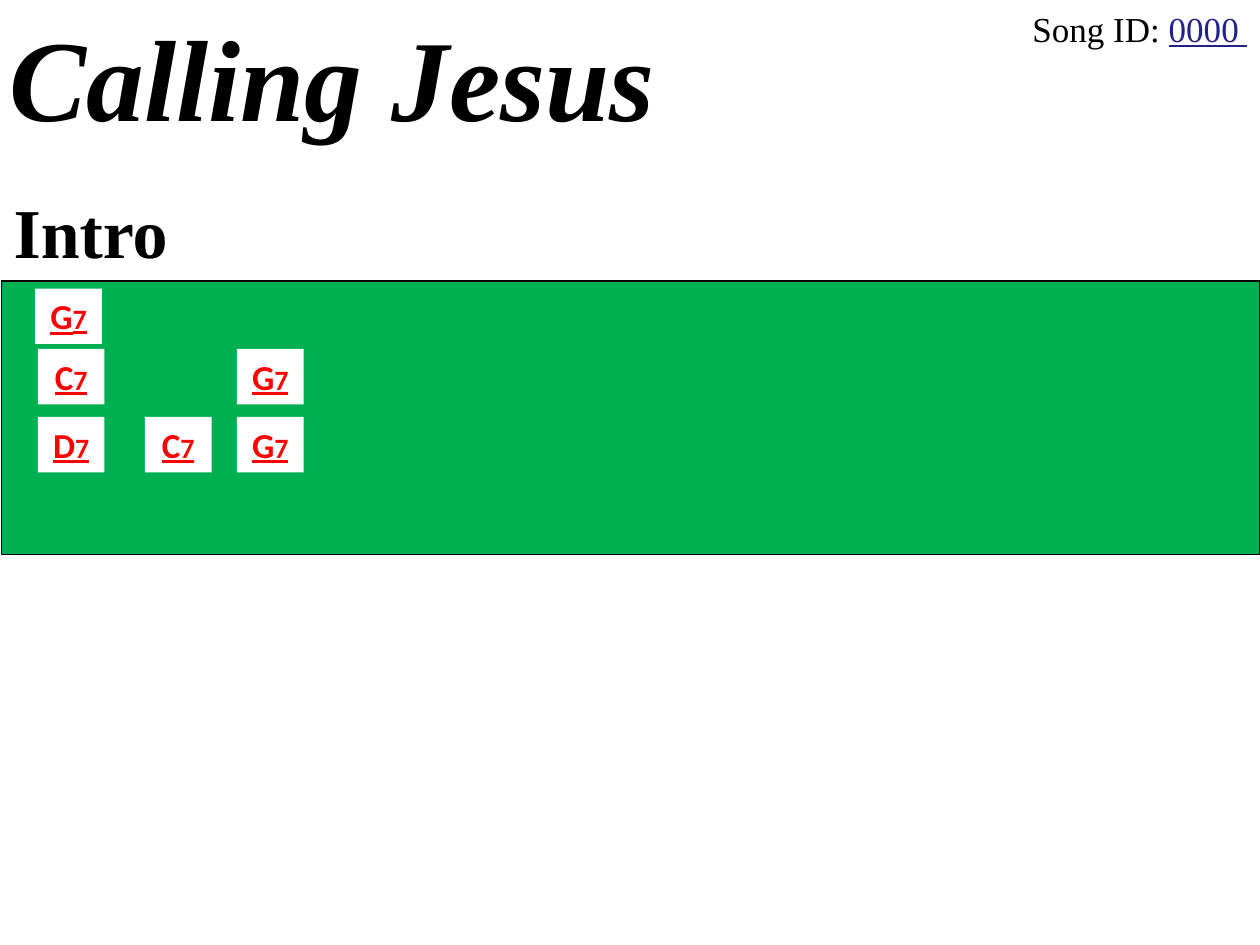
from pptx import Presentation
from pptx.dml.color import RGBColor
from pptx.enum.shapes import MSO_SHAPE
from pptx.enum.text import MSO_ANCHOR, MSO_AUTO_SIZE, PP_ALIGN
from pptx.util import Inches, Pt

BLACK, WHITE, RED, GREEN, NAVY = "000000", "FFFFFF", "FF0000", "00B050", "22228B"
SERIF, SANS = "Times New Roman", "Calibri"

COLUMNS = (0.28, 0.3, 1.15, 1.88)
ROWS = (2.29, 2.77, 3.31)
CHORD_SIZE = (0.53, 0.44)
CHORDS = (  # root, column, row
    ("G", 0, 0),
    ("C", 1, 1), ("G", 3, 1),
    ("D", 1, 2), ("C", 2, 2), ("G", 3, 2),
)


def color(value):
    return RGBColor.from_string(value)


def add_label(slide, area, spans, align=PP_ALIGN.LEFT):
    """Add a white text box; each span is (text, font settings)."""
    box = slide.shapes.add_textbox(*map(Inches, area))
    box.fill.solid()
    box.fill.fore_color.rgb = color(WHITE)
    frame = box.text_frame
    frame.word_wrap = True
    frame.auto_size = MSO_AUTO_SIZE.SHAPE_TO_FIT_TEXT
    frame.vertical_anchor = MSO_ANCHOR.TOP
    para = frame.paragraphs[0]
    para.alignment = align
    for text, settings in spans:
        span = para.add_run()
        span.text = text
        style_span(span, **settings)


def style_span(span, size, name=SERIF, fill=BLACK, bold=False, italic=False, underline=False):
    font = span.font
    font.size = Pt(size)
    font.name = name
    font.color.rgb = color(fill)
    font.bold = bold
    font.italic = italic
    font.underline = underline


def add_band(slide, area):
    band = slide.shapes.add_shape(MSO_SHAPE.RECTANGLE, *map(Inches, area))
    band.shadow.inherit = False
    band.fill.solid()
    band.fill.fore_color.rgb = color(GREEN)
    band.line.color.rgb = color(BLACK)
    band.line.width = Pt(0.75)


def add_chord(slide, root, column, row):
    style = dict(name=SANS, fill=RED, bold=True, underline=True)
    spans = [(root, dict(size=20, **style)), ("7", dict(size=16, **style))]
    add_label(slide, (COLUMNS[column], ROWS[row], *CHORD_SIZE), spans, PP_ALIGN.CENTER)


def main():
    deck = Presentation()
    deck.slide_width, deck.slide_height = Inches(10), Inches(7.5)
    slide = deck.slides.add_slide(deck.slide_layouts[6])

    add_label(slide, (-0.02, 0, 7.61, 1.21),
              [("Calling Jesus", dict(size=66, bold=True, italic=True))])
    add_label(slide, (6.01, 0.01, 3.99, 0.44),
              [("Song ID: ", dict(size=20)),
               ("0000 ", dict(size=20, fill=NAVY, underline=True))],
              PP_ALIGN.RIGHT)
    add_band(slide, (0.01, 2.23, 9.99, 2.17))
    add_label(slide, (0.01, 1.45, 3.33, 0.77), [("Intro", dict(size=40, bold=True))])
    for root, column, row in CHORDS:
        add_chord(slide, root, column, row)

    deck.save("out.pptx")


if __name__ == "__main__":
    main()
